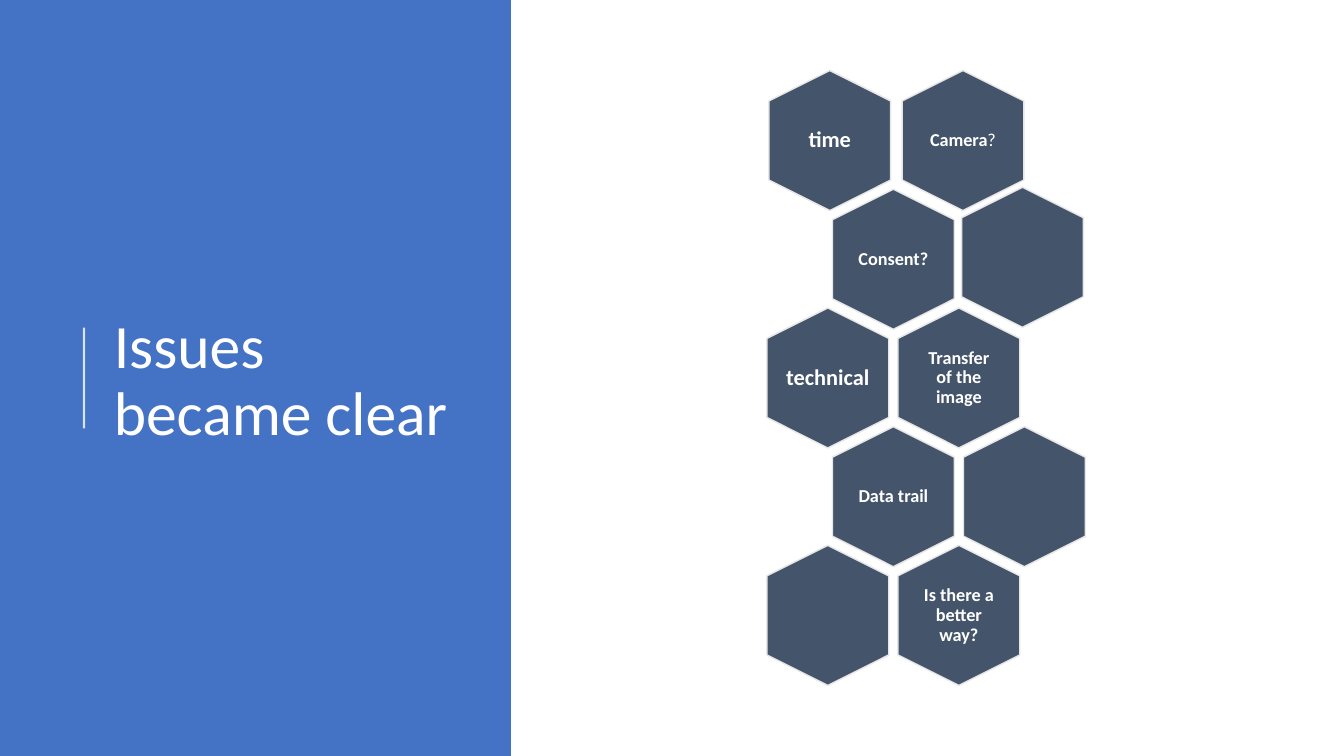
from lxml import etree
from pptx import Presentation
from pptx.dml.color import RGBColor
from pptx.enum import shapes, text
from pptx.oxml.ns import qn
from pptx.util import Pt

HUES = {"panel": "4472C4", "cell": "44546A", "edge": "E7E6E6", "white": "FFFFFF"}
FONT = "Calibri"

# Each cell is a list of (words, bold) runs; headings stand in the larger size.
ROWS = [
    [[("time", True)], [("Camera", True), ("?", False)]],
    [[("Consent?", True)], []],
    [[("technical", True)], [("Transfer of the image", True)]],
    [[("Data trail", True)], []],
    [[], [("Is there a better way?", True)]],
]
HEADS = {"time", "technical"}
# Small shifts (x, y) of single cells from the even grid.
SHIFTS = {(0, 0): (1.4, 0), (0, 1): (2.9, 0), (1, 1): (-1.4, -1.4)}


def hue(name):
    return RGBColor.from_string(HUES[name])


def add_text(slide, box, runs, size, inset):
    """Add a vertically centred text box and return its paragraph."""
    frame = slide.shapes.add_textbox(*map(Pt, box)).text_frame
    frame.word_wrap = True
    frame.vertical_anchor = text.MSO_ANCHOR.MIDDLE
    frame.margin_left = frame.margin_right = Pt(inset[0])
    frame.margin_top = frame.margin_bottom = Pt(inset[1])
    para = frame.paragraphs[0]
    para.line_spacing = 0.9
    para.font.name, para.font.size = FONT, Pt(size)
    para.font.color.rgb = hue("white")
    for words, bold in runs:
        run = para.add_run()
        run.text, run.font.bold = words, bold
    return para


def add_panel(slide, box):
    left, top, width, height = box
    panel = slide.shapes.add_shape(shapes.MSO_SHAPE.RECTANGLE, *map(Pt, box))
    panel.shadow.inherit = False
    panel.fill.solid()
    panel.fill.fore_color.rgb = hue("panel")
    panel.line.fill.background()

    x = left + 60
    rule = slide.shapes.add_connector(
        shapes.MSO_CONNECTOR.STRAIGHT, Pt(x), Pt(top + 306), Pt(x), Pt(top + 234))
    rule.line.width = Pt(1.5)
    rule.line.color.rgb = hue("white")
    props = rule._element.spPr
    tint = props.find(".//" + qn("a:srgbClr"))
    etree.SubElement(tint, qn("a:alpha")).set("val", "80000")
    etree.SubElement(props, qn("a:effectLst"))

    area = (left + 74.2, top + 56.2, width - 99.4, height - 106.6)
    add_text(slide, area, [("Issues became clear", False)], 44, (7.2, 3.6))


def add_cell(slide, x, y, runs):
    """Draw one upright hexagon centred on x, y, with its label."""
    wide, high = 100, 87
    cell = slide.shapes.add_shape(
        shapes.MSO_SHAPE.HEXAGON,
        Pt(x - wide / 2), Pt(y - high / 2), Pt(wide), Pt(high))
    cell.rotation = 90
    cell.adjustments[0] = 0.25
    cell.adjustments[1] = 1.1547
    cell.shadow.inherit = False
    cell.fill.solid()
    cell.fill.fore_color.rgb = hue("cell")
    cell.line.color.rgb = hue("edge")
    cell.line.width = Pt(1)
    if runs:
        head = runs[0][0] in HEADS
        size, inset = (16, (0, 0)) if head else (13, (3.6, 3.6))
        para = add_text(slide, (x - 30, y - 34, 60, 68), runs, size, inset)
        para.alignment = text.PP_ALIGN.CENTER


def add_comb(slide, box):
    """Fill the box with rows of cells, every second row moved half a step."""
    left, top, width, height = box
    step = width / 2.5
    pitch = height / len(ROWS)
    for row, cells in enumerate(ROWS):
        for col, runs in enumerate(cells):
            dx, dy = SHIFTS.get((row, col), (0, 0))
            x = left + step * (col + 0.5 + row % 2 / 2) + dx
            y = top + pitch * (row + 0.5) + dy
            add_cell(slide, x, y, runs)


def main():
    deck = Presentation()
    deck.slide_width, deck.slide_height = Pt(960), Pt(540)
    slide = deck.slides.add_slide(deck.slide_layouts[6])
    add_panel(slide, (0, 0, 365, 540))
    add_comb(slide, (544.5, 58, 234, 424))
    deck.save("out.pptx")


if __name__ == "__main__":
    main()
